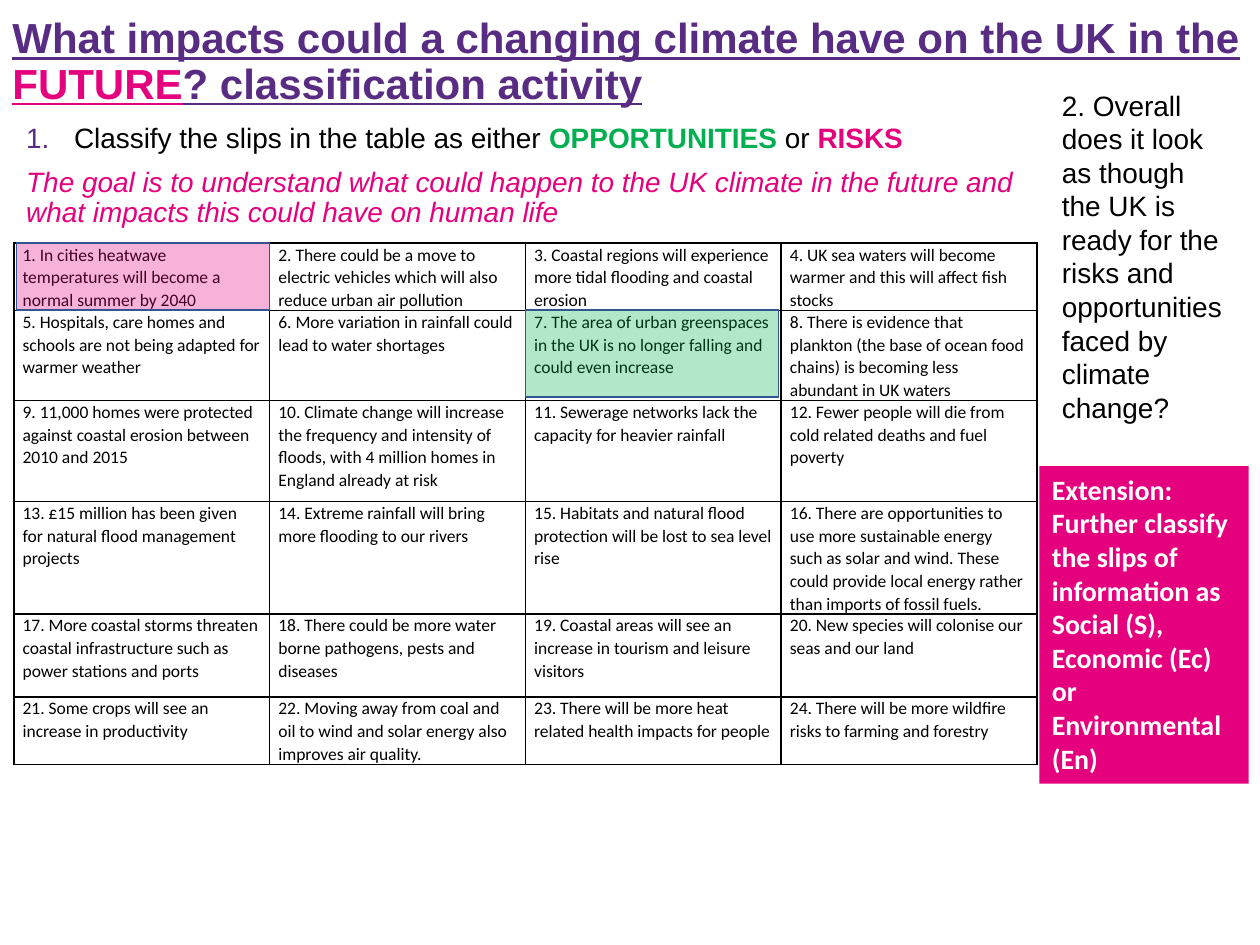
from lxml import etree
from pptx import Presentation
from pptx.dml.color import RGBColor
from pptx.enum.shapes import MSO_SHAPE
from pptx.enum.text import MSO_ANCHOR, MSO_AUTO_SIZE, PP_ALIGN
from pptx.oxml import parse_xml
from pptx.oxml.ns import nsdecls, qn
from pptx.util import Inches, Pt

COLORS = {
    "purple": "582C83",
    "pink": "E5007E",
    "green": "00B050",
    "outline": "325491",
    "black": "000000",
    "white": "FFFFFF",
}

SLIPS = [
    ["1. In cities heatwave temperatures will become a normal summer by 2040",
     "2. There could be a move to electric vehicles which will also reduce urban air pollution",
     "3. Coastal regions will experience more tidal flooding and coastal erosion",
     "4. UK sea waters will become warmer and this will affect fish stocks"],
    ["5. Hospitals, care homes and schools are not being adapted for warmer weather",
     "6. More variation in rainfall could lead to water shortages",
     "7. The area of urban greenspaces in the UK is no longer falling and could even increase",
     "8. There is evidence that plankton (the base of ocean food chains) is becoming less "
     "abundant in UK waters"],
    ["9. 11,000 homes were protected against coastal erosion between 2010 and 2015",
     "10. Climate change will increase the frequency and intensity of floods, with 4 million "
     "homes in England already at risk",
     "11. Sewerage networks lack the capacity for heavier rainfall",
     "12. Fewer people will die from cold related deaths and fuel poverty"],
    ["13. £15 million has been given for natural flood management projects",
     "14. Extreme rainfall will bring more flooding to our rivers",
     "15. Habitats and natural flood protection will be lost to sea level rise",
     "16. There are opportunities to use more sustainable energy such as solar and wind. These "
     "could provide local energy rather than imports of fossil fuels."],
    ["17. More coastal storms threaten coastal infrastructure such as power stations and ports",
     "18. There could be more water borne pathogens, pests and diseases",
     "19. Coastal areas will see an increase in tourism and leisure visitors",
     "20. New species will colonise our seas and our land"],
    ["21. Some crops will see an increase in productivity",
     "22. Moving away from coal and oil to wind and solar energy also improves air quality.",
     "23. There will be more heat related health impacts for people",
     "24. There will be more wildfire risks to farming and forestry"],
]
ROW_HEIGHTS = [0.53, 0.66, 0.8, 0.39, 0.66, 0.39]


def rgb(name):
    return RGBColor.from_string(COLORS[name])


def add_run(p, text, size, color="black", font="Arial", bold=False, italic=False, underline=False):
    r = p.add_run()
    r.text = text
    r.font.name, r.font.size = font, Pt(size)
    r.font.bold, r.font.italic, r.font.underline = bold, italic, underline
    r.font.color.rgb = rgb(color)


def add_text_box(slide, box):
    tf = slide.shapes.add_textbox(*map(Inches, box)).text_frame
    tf.word_wrap = True
    return tf


def add_rect(slide, box, fill):
    sp = slide.shapes.add_shape(MSO_SHAPE.RECTANGLE, *map(Inches, box))
    sp.shadow.inherit = False
    sp.fill.solid()
    sp.fill.fore_color.rgb = rgb(fill)
    return sp


def add_title(slide, box):
    tf = add_text_box(slide, box)
    tf.vertical_anchor = MSO_ANCHOR.MIDDLE
    p = tf.paragraphs[0]
    p.line_spacing = 0.9
    for text, color in [
        ("What impacts could a changing climate have on the UK in the ", "purple"),
        ("FUTURE", "pink"),
        ("? classification activity", "purple"),
    ]:
        add_run(p, text, 24, color, bold=True, underline=True)


def add_instructions(slide, box):
    tf = add_text_box(slide, box)
    # Numbered task
    p = tf.paragraphs[0]
    p.line_spacing = 0.9
    pPr = p._p.get_or_add_pPr()
    pPr.set("marL", str(Inches(0.38)))
    pPr.set("indent", str(Inches(-0.38)))
    bullet_color = etree.SubElement(pPr, qn("a:buClr"))
    etree.SubElement(bullet_color, qn("a:srgbClr"), val=COLORS["purple"])
    etree.SubElement(pPr, qn("a:buFont"), typeface="+mj-lt")
    etree.SubElement(pPr, qn("a:buAutoNum"), type="arabicPeriod")
    add_run(p, "Classify the slips in the table as either ", 16)
    add_run(p, "OPPORTUNITIES", 16, "green", bold=True)
    add_run(p, " or ", 16)
    add_run(p, "RISKS", 16, "pink", bold=True)
    # Goal
    p = tf.add_paragraph()
    p.line_spacing = 0.9
    p.space_before = Pt(7.5)
    add_run(p, "The goal is to understand what could happen to the UK climate in the future "
               "and what impacts this could have on human life", 16, "pink", italic=True)


def set_borders(cell):
    tcPr = cell._tc.get_or_add_tcPr()
    for i, side in enumerate(("lnL", "lnR", "lnT", "lnB")):
        tcPr.insert(i, parse_xml(
            f'<a:{side} {nsdecls("a")} w="{Pt(1)}"><a:solidFill>'
            f'<a:srgbClr val="{COLORS["black"]}"/></a:solidFill></a:{side}>'))


def add_slip_table(slide, box):
    rows, cols = len(SLIPS), len(SLIPS[0])
    table = slide.shapes.add_table(rows, cols, *map(Inches, box)).table
    table.first_row = table.horz_banding = False
    for col in table.columns:
        col.width = Inches(box[2] / cols)
    for row, height, texts in zip(table.rows, ROW_HEIGHTS, SLIPS):
        row.height = Inches(height)
        for cell, text in zip(row.cells, texts):
            cell.margin_left = cell.margin_right = Inches(0.07)
            cell.margin_top = cell.margin_bottom = 0
            cell.fill.background()
            set_borders(cell)
            p = cell.text_frame.paragraphs[0]
            p.line_spacing = 1.07
            add_run(p, text, 10, font="Calibri")


def add_highlight(slide, box, color):
    sp = add_rect(slide, box, color)
    srgb = sp.fill._xPr.find(f".//{qn('a:srgbClr')}")
    etree.SubElement(srgb, qn("a:alpha"), val="30000")
    sp.line.color.rgb = rgb("outline")
    sp.line.width = Pt(1)


def add_extension(slide, box):
    sp = add_rect(slide, box, "pink")
    sp.line.fill.background()
    tf = sp.text_frame
    tf.word_wrap = True
    tf.auto_size = MSO_AUTO_SIZE.SHAPE_TO_FIT_TEXT
    tf.vertical_anchor = MSO_ANCHOR.TOP
    p = tf.paragraphs[0]
    p.alignment = PP_ALIGN.LEFT
    add_run(p, "Extension: Further classify the slips of information as Social (S), "
               "Economic (Ec) or Environmental (En)", 16, "white", "Calibri", bold=True)


def add_question(slide, box):
    tf = add_text_box(slide, box)
    tf.auto_size = MSO_AUTO_SIZE.SHAPE_TO_FIT_TEXT
    add_run(tf.paragraphs[0], "2. Overall does it look as though the UK is ready for the risks "
                              "and opportunities faced by climate change?", 16)


def main():
    prs = Presentation()
    prs.slide_width, prs.slide_height = Inches(10), Inches(7.5)
    slide = prs.slides.add_slide(prs.slide_layouts[6])
    add_title(slide, (0, 0, 10.08, 1))
    add_instructions(slide, (0.11, 0.94, 8.2, 1.33))
    add_extension(slide, (8.25, 3.7, 1.66, 2.52))
    add_slip_table(slide, (0.11, 1.93, 8.12, sum(ROW_HEIGHTS)))
    # Worked examples: one opportunity, one risk
    add_highlight(slide, (4.17, 2.46, 2.01, 0.69), "green")
    add_highlight(slide, (0.13, 1.93, 2.01, 0.53), "pink")
    add_question(slide, (8.33, 0.65, 1.5, 2.79))
    prs.save("out.pptx")


if __name__ == "__main__":
    main()
